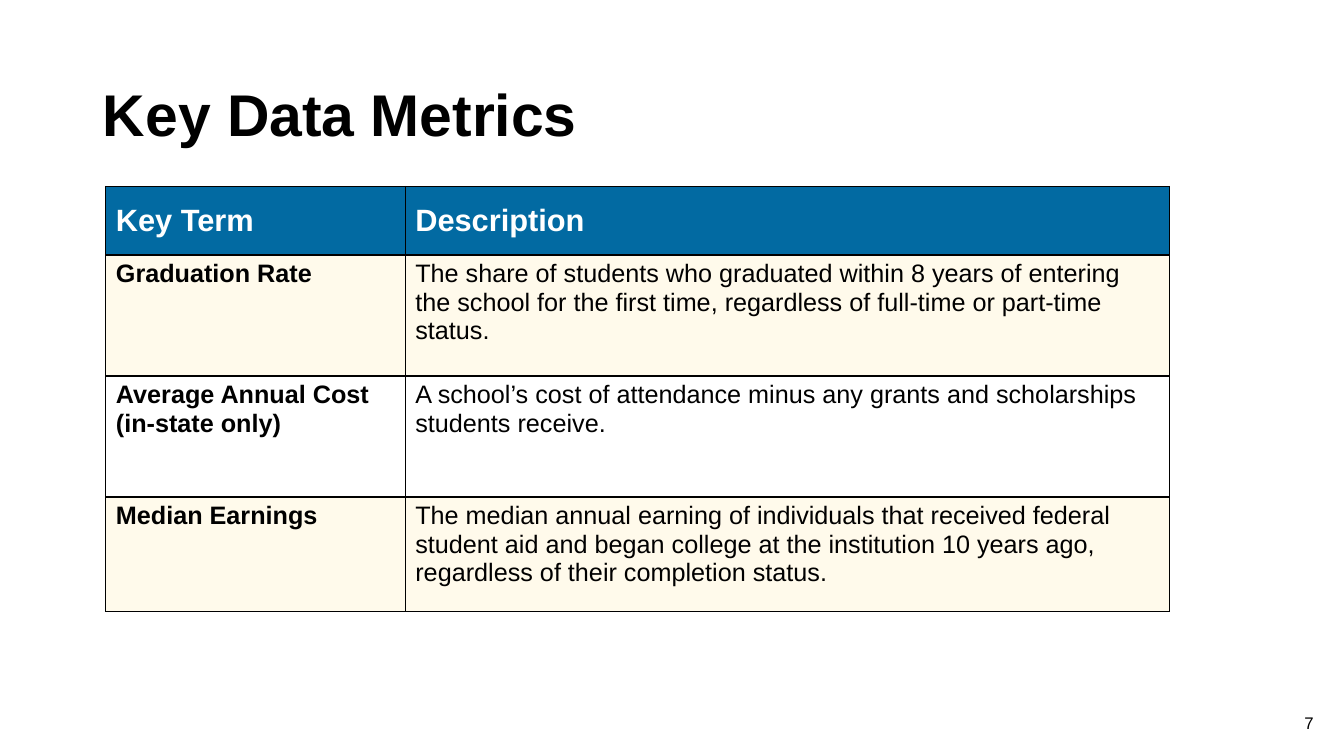
import dataclasses

import lxml.etree
import pptx
import pptx.dml.color
import pptx.enum.text
import pptx.oxml.ns
import pptx.util

Inches = pptx.util.Inches
Pt = pptx.util.Pt
Color = pptx.dml.color.RGBColor.from_string
Anchor = pptx.enum.text.MSO_ANCHOR
Align = pptx.enum.text.PP_ALIGN


@dataclasses.dataclass(frozen=True)
class Theme:
    font: str = "Arial"
    ink: str = "000000"
    header_ink: str = "FFFFFF"
    header_fill: str = "026AA2"
    band_fill: str = "FFFAEB"
    title_size: int = 42
    header_size: int = 22
    body_size: int = 18
    number_size: int = 12
    rule: int = 1
    header_rule: int = 2


THEME = Theme()

COLUMN_WIDTHS = (2.97, 7.58)
ROW_HEIGHTS = (0.68, 1.2, 1.2, 1.14)
METRICS = (
    ("Key Term", "Description"),
    ("Graduation Rate\u00a0",
     "The share of students who graduated within 8 years of entering the school "
     "for the first time, regardless of full-time or part-time status."),
    ("Average Annual Cost \v(in-state only)\u00a0",
     "A school’s cost of attendance minus any grants and scholarships students receive."),
    ("Median Earnings\u00a0",
     "The median annual earning of individuals that received federal student aid and "
     "began college at the institution 10 years ago, regardless of their completion status."),
)


def write(frame, text, size, color=THEME.ink, bold=False, align=Align.LEFT):
    frame.text = text
    paragraph = frame.paragraphs[0]
    paragraph.alignment = align
    for run in paragraph.runs:
        run.font.name = THEME.font
        run.font.size = Pt(size)
        run.font.bold = bold
        run.font.color.rgb = Color(color)


def place(shape, left, top, width, height):
    shape.left, shape.top = Inches(left), Inches(top)
    shape.width, shape.height = Inches(width), Inches(height)


def add_borders(cell, top, bottom):
    """Draw all four cell borders, with the given top and bottom widths in points."""
    qn = pptx.oxml.ns.qn
    properties = cell._tc.get_or_add_tcPr()
    widths = {"a:lnL": THEME.rule, "a:lnR": THEME.rule, "a:lnT": top, "a:lnB": bottom}
    for side, width in widths.items():
        line = lxml.etree.SubElement(properties, qn(side), w=str(Pt(width)))
        fill = lxml.etree.SubElement(line, qn("a:solidFill"))
        lxml.etree.SubElement(fill, qn("a:srgbClr"), val=THEME.ink)


def fill_cell(cell, color):
    if color is None:
        cell.fill.background()
    else:
        cell.fill.solid()
        cell.fill.fore_color.rgb = Color(color)


def add_title(slide, text):
    title = slide.shapes.title
    place(title, 0.92, 0.4, 10.8, 1.45)
    title.text_frame.vertical_anchor = Anchor.MIDDLE
    write(title.text_frame, text, THEME.title_size, bold=True)


def add_metrics_table(slide):
    table = slide.shapes.add_table(
        len(METRICS), len(COLUMN_WIDTHS), Inches(1.05), Inches(1.85),
        Inches(sum(COLUMN_WIDTHS)), Inches(sum(ROW_HEIGHTS))).table
    table.horz_banding = False
    for column, width in zip(table.columns, COLUMN_WIDTHS):
        column.width = Inches(width)
    for row, height in zip(table.rows, ROW_HEIGHTS):
        row.height = Inches(height)

    for r, texts in enumerate(METRICS):
        for c, text in enumerate(texts):
            cell = table.cell(r, c)
            add_borders(cell,
                        top=THEME.header_rule if r == 1 else THEME.rule,
                        bottom=THEME.header_rule if r == 0 else THEME.rule)
            if r == 0:
                cell.vertical_anchor = Anchor.MIDDLE
                fill_cell(cell, THEME.header_fill)
                write(cell.text_frame, text, THEME.header_size, THEME.header_ink, bold=True)
            else:
                fill_cell(cell, THEME.band_fill if r % 2 else None)
                write(cell.text_frame, text, THEME.body_size, bold=c == 0)


def add_page_number(slide, number):
    frame = slide.shapes.add_textbox(
        Inches(10.33), Inches(7.1), Inches(3), Inches(0.4)).text_frame
    frame.word_wrap = True
    frame.vertical_anchor = Anchor.MIDDLE
    frame.margin_right = frame.margin_bottom = Inches(0.3)
    write(frame, number, THEME.number_size, align=Align.RIGHT)


def main():
    deck = pptx.Presentation()
    deck.slide_width, deck.slide_height = Inches(13.33), Inches(7.5)
    slide = deck.slides.add_slide(deck.slide_layouts.get_by_name("Title Only"))
    add_title(slide, "Key Data Metrics")
    add_metrics_table(slide)
    add_page_number(slide, "7")
    deck.save("out.pptx")


if __name__ == "__main__":
    main()
